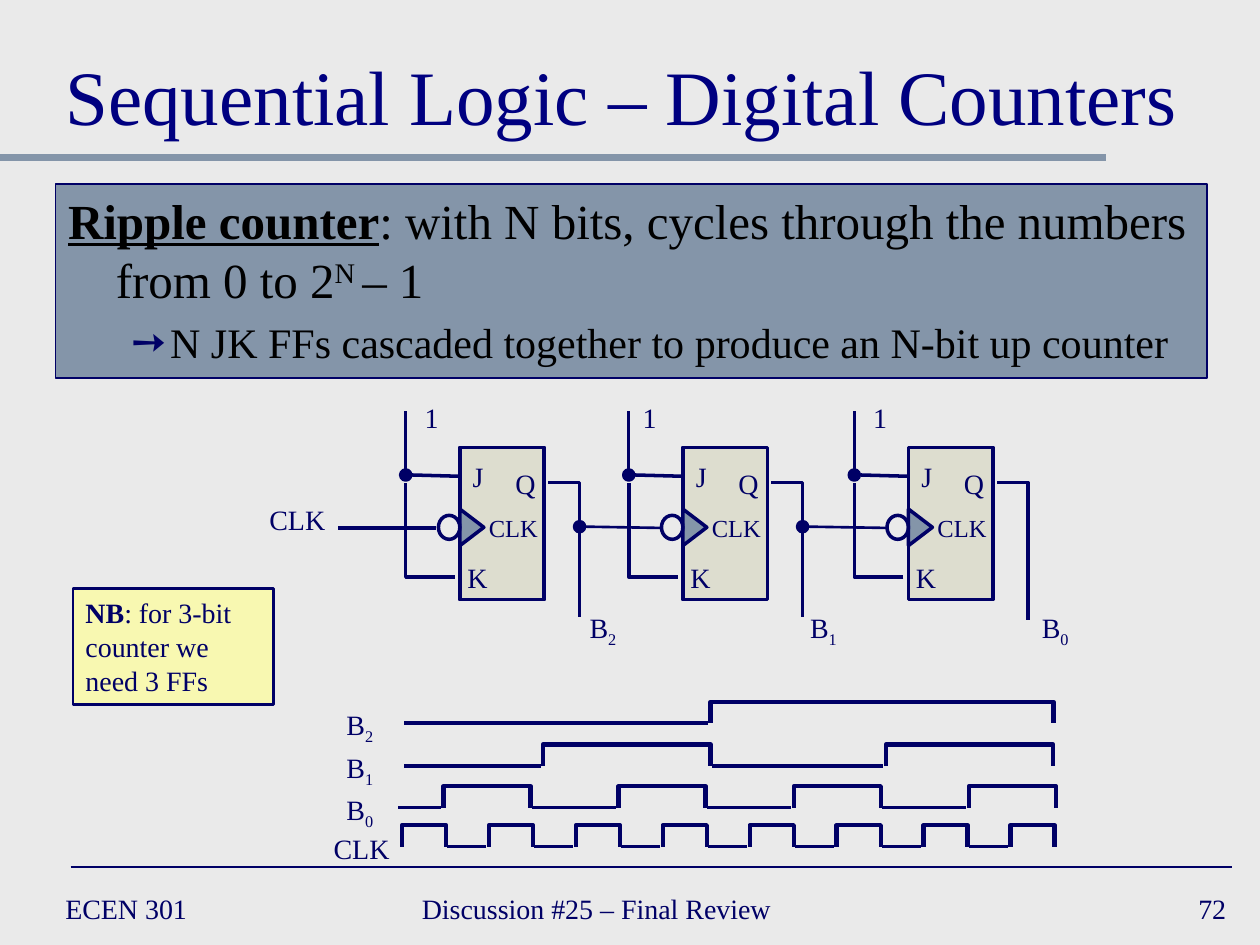
import pptx
import pptx.util
import pptx.dml.color
import pptx.enum.shapes
import pptx.enum.text
import pptx.oxml.ns
from lxml import etree

Inches, Pt = pptx.util.Inches, pptx.util.Pt
RGBColor = pptx.dml.color.RGBColor
SHAPE = pptx.enum.shapes.MSO_SHAPE
ALIGN = pptx.enum.text.PP_ALIGN
ANCHOR = pptx.enum.text.MSO_ANCHOR
FIT = pptx.enum.text.MSO_AUTO_SIZE
qn = pptx.oxml.ns.qn

NAVY = RGBColor(0x00, 0x00, 0x66)
BLUE = RGBColor(0x00, 0x00, 0x80)
BLACK = RGBColor(0x00, 0x00, 0x00)
SLATE = RGBColor(0x84, 0x95, 0xA9)
OLIVE = RGBColor(0xAB, 0xA9, 0x64)
YELLOW = RGBColor(0xFF, 0xFF, 0x99)
GREY = RGBColor(0xEA, 0xEA, 0xEA)

deck = pptx.Presentation()
deck.slide_width, deck.slide_height = Inches(10), Inches(7.5)
slide = deck.slides.add_slide(deck.slide_layouts[1])
slide.background.fill.solid()
slide.background.fill.fore_color.rgb = GREY
shapes = slide.shapes


def write(par, text, size=16, color=NAVY, bold=False, under=False, base=0):
    """Add one formatted run to a paragraph; base is a percent offset."""
    run = par.add_run()
    run.text = text
    font = run.font
    font.name, font.size, font.bold, font.underline = "Times New Roman", Pt(size), bold, under
    font.color.rgb = color
    if base:
        run._r.get_or_add_rPr().set("baseline", str(base * 1000))


def trace(*points, width=2, color=NAVY):
    """Draw a straight line, or an open outline through three or more points."""
    spots = [(Inches(x), Inches(y)) for x, y in points]
    if len(spots) == 2:
        wire = shapes.add_connector(pptx.enum.shapes.MSO_CONNECTOR.STRAIGHT, *spots[0], *spots[1])
    else:
        pen = shapes.build_freeform(*spots[0])
        pen.add_line_segments(spots[1:], close=False)
        wire = pen.convert_to_shape()
        wire.fill.background()
    wire.line.color.rgb = color
    wire.line.width = Pt(width)
    etree.SubElement(wire._element.spPr, qn("a:effectLst"))


# Rules above and below the content
trace((0, 1.25), (8.78, 1.25), width=4, color=SLATE)
trace((0.56, 6.88), (9.78, 6.88), width=1)

# Title
title = shapes.title
title.left, title.top, title.width, title.height = map(Inches, (0.42, 0.17, 9.17, 1))
title.text_frame.auto_size = FIT.NONE
title.text_frame.vertical_anchor = ANCHOR.BOTTOM
par = title.text_frame.paragraphs[0]
par.alignment = ALIGN.LEFT
write(par, "Sequential Logic – Digital Counters", size=44, color=BLUE)

# Definition panel
body = slide.placeholders[1]
body.left, body.top, body.width, body.height = map(Inches, (0.44, 1.46, 9.14, 1.54))
body.fill.solid()
body.fill.fore_color.rgb = SLATE
body.line.color.rgb = NAVY
body.line.width = Pt(0.75)
frame = body.text_frame
frame.auto_size = FIT.NONE
par = frame.paragraphs[0]
par.space_before = Pt(0)
props = par._p.get_or_add_pPr()
props.set("marL", str(Inches(0.38)))
props.set("indent", str(Inches(-0.38)))
etree.SubElement(props, qn("a:buNone"))
write(par, "Ripple counter", size=28, color=BLACK, bold=True, under=True)
write(par, ": with N bits, cycles through the numbers from 0 to 2", size=28, color=BLACK)
write(par, "N ", size=28, color=BLACK, base=30)
write(par, "– 1", size=28, color=BLACK)

par = frame.add_paragraph()
par.level = 1
par.space_before = Pt(5)
props = par._p.get_or_add_pPr()
props.set("marL", str(Inches(0.81)))
props.set("indent", str(Inches(-0.31)))
tint = etree.SubElement(props, qn("a:buClr"))
etree.SubElement(tint, qn("a:srgbClr")).set("val", str(NAVY))
etree.SubElement(props, qn("a:buChar")).set("char", "➙")
write(par, "N JK FFs cascaded together to produce an N-bit up counter", size=24, color=BLACK)

# Parts and labels; a label is left, top, width, text, subscript, size
parts = [(SHAPE.RECTANGLE, 0.58, 4.67, 1.59, 0.92, YELLOW, 70, 1.5)]
labels = [(2.04, 3.94, 0.64, "CLK", "", 16)]

# Flip-flops and their wiring
lefts = (3.65, 5.42, 7.21)
for x, one, out, bit in zip(lefts, (3.27, 5, 6.83), (4.57, 6.32, 8.16), "210"):
    feed, port = x - 0.43, x + 0.95
    parts += [
        (SHAPE.RECTANGLE, x, 3.55, 0.67, 1.21, OLIVE, 20, 2),
        (SHAPE.ISOSCELES_TRIANGLE, x - 0.05, 4.09, 0.29, 0.19, SLATE, 100, 2),
        (SHAPE.OVAL, x - 0.17, 4.09, 0.17, 0.19, None, 100, 2),
        (SHAPE.OVAL, feed - 0.04, 3.73, 0.08, 0.08, NAVY, 100, 2),
    ]
    labels += [
        (x, 3.6, 0.29, "J", "", 16),
        (x + 0.34, 3.65, 0.36, "Q", "", 16),
        (x + 0.13, 4.02, 0.59, "CLK", "", 14),
        (x - 0.04, 4.4, 0.36, "K", "", 16),
        (one, 3.13, 0.31, "1", "", 16),
        (out, 4.8, 0.43, "B", bit, 16),
    ]
    trace((feed, 3.72), (feed, 3.26))
    trace((x, 3.78), (x - 0.38, 3.77))
    trace((x - 0.04, 4.58), (feed, 4.58), (feed, 3.83))
    if x == lefts[-1]:
        trace((port, 4.92), (port, 3.83), (x + 0.7, 3.83))
    else:
        parts.append((SHAPE.OVAL, port - 0.04, 4.14, 0.08, 0.08, NAVY, 100, 2))
        trace((port, 4.13), (port, 3.83), (x + 0.7, 3.83))
        trace((port, 4.23), (port, 4.9))

# Clock line and links between stages
trace((3.46, 4.19), (2.68, 4.19))
for x, end in zip(lefts, lefts[1:]):
    trace((x + 1, 4.18), (end - 0.18, 4.19), width=1.5)

# Timing diagram: text, subscript, label left and width, top, lead, rise, high, pitch, count
waves = (
    ("B", "2", 2.64, 0.43, 5.57, 3.21, 5.64, 2.72, 0, 1),
    ("B", "1", 2.64, 0.43, 5.91, 3.21, 4.31, 1.33, 2.72, 2),
    ("B", "0", 2.64, 0.43, 6.24, 3.16, 3.52, 0.69, 1.39, 4),
    ("CLK", "", 2.55, 0.64, 6.55, None, 3.19, 0.35, 0.69, 8),
)
for text, sub, left, wide, top, low, rise, high, pitch, count in waves:
    labels.append((left, top, wide, text, sub, 16))
    foot = top + 0.17
    for step in range(count):
        start = rise + step * pitch
        if low is not None:
            trace((low, foot), (start - 0.02, foot))
        trace((start, foot), (start, top), (start + high, top), (start + high, foot), width=2.5)
        low = start + high + 0.01

# Solid parts
for kind, x, y, wide, tall, color, alpha, width in parts:
    part = shapes.add_shape(kind, Inches(x), Inches(y), Inches(wide), Inches(tall))
    part.shadow.inherit = False
    part.line.color.rgb = NAVY
    part.line.width = Pt(width)
    if kind == SHAPE.ISOSCELES_TRIANGLE:
        part.rotation = 90
    if color is None:
        part.fill.background()
        continue
    part.fill.solid()
    part.fill.fore_color.rgb = color
    if alpha < 100:
        tint = part._element.spPr.find(qn("a:solidFill")).find(qn("a:srgbClr"))
        etree.SubElement(tint, qn("a:alpha")).set("val", str(alpha * 1000))
    if color == YELLOW:
        part.text_frame.word_wrap = True
        par = part.text_frame.paragraphs[0]
        par.alignment = ALIGN.LEFT
        write(par, "NB", bold=True)
        write(par, ": for 3-bit counter we need 3 FFs")

# Diagram labels
for x, y, wide, text, sub, size in labels:
    box = shapes.add_textbox(Inches(x), Inches(y), Inches(wide), Inches(0.37 if size == 16 else 0.33))
    box.text_frame.word_wrap = False
    par = box.text_frame.paragraphs[0]
    par.alignment = ALIGN.CENTER
    write(par, text, size=size)
    if sub:
        write(par, sub, size=size, base=-25)

# Footer
for x, wide, text, side in (
    (0.42, 2.17, "ECEN 301", ALIGN.LEFT),
    (3.25, 3.83, "Discussion #25 – Final Review", ALIGN.LEFT),
    (7.75, 2.08, "72", ALIGN.RIGHT),
):
    box = shapes.add_textbox(Inches(x), Inches(7), Inches(wide), Inches(0.42))
    box.text_frame.word_wrap = True
    box.text_frame.vertical_anchor = ANCHOR.MIDDLE
    par = box.text_frame.paragraphs[0]
    par.alignment = side
    write(par, text)

deck.save("out.pptx")
